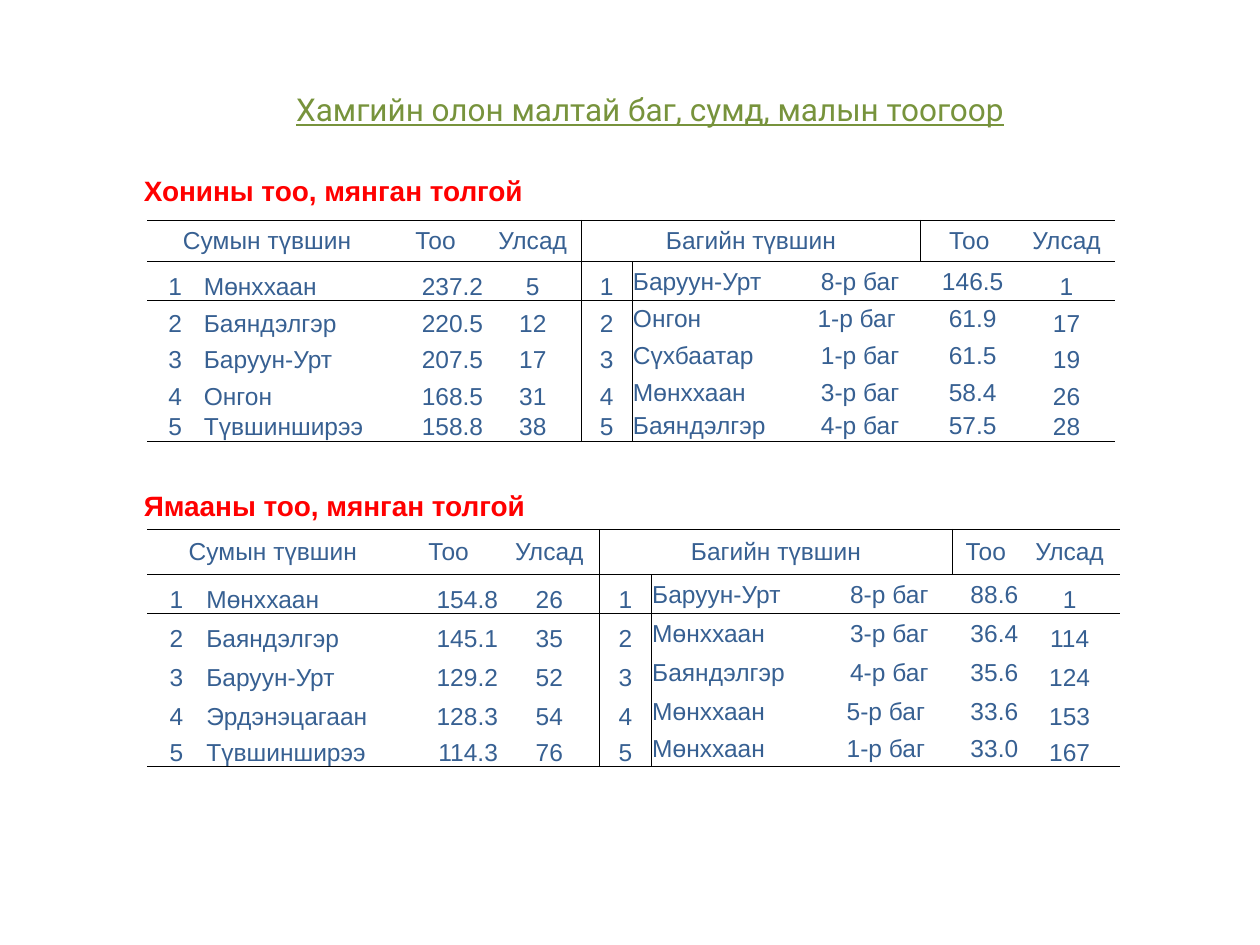
"""Build the slide that ranks districts and bags by sheep and goat numbers."""
from dataclasses import dataclass

import lxml.etree
import pptx
import pptx.dml.color
import pptx.enum.text
import pptx.oxml.ns
import pptx.util

Cm, Pt = pptx.util.Cm, pptx.util.Pt
ALIGN, ANCHOR = pptx.enum.text.PP_ALIGN, pptx.enum.text.MSO_ANCHOR
qn = pptx.oxml.ns.qn

COLORS = {"title": "77933C", "heading": "FF0000", "cell": "376092", "rule": "000000"}
NO_STYLE = "{2D5ABB26-0587-4C30-8999-92F81FD0307C}"
HEADER = ("Сумын түвшин", "", "Тоо", "Улсад", "Багийн түвшин", "", "", "Тоо", "Улсад")
MIDDLE_COLS = (5, 6, 7)
DIVIDER = 4


@dataclass
class Label:
    text: str
    left: float
    top: float
    height: float
    size: int
    color: str
    font: str = "Arial"
    bold: bool = False
    underline: bool = False


@dataclass
class Ranking:
    top: float
    widths: tuple[float, ...]
    heights: tuple[float, ...]
    bag_count_align: ALIGN
    rows: tuple[tuple[str, ...], ...]


LABELS = (
    Label("Хамгийн олон малтай баг, сумд, малын тоогоор", 5.72, 1.7, 1.02, 18,
          "title", font="Roboto", underline=True),
    Label("Хонины тоо, мянган толгой", 2.65, 3.38, 0.94, 16, "heading", bold=True),
    Label("Ямааны тоо, мянган толгой", 2.65, 9.73, 0.94, 16, "heading", bold=True),
)

GOATS = Ranking(
    10.67,
    (1.17, 3.89, 2.03, 2.03, 1.04, 3.53, 2.54, 1.35, 2.03),
    (0.91, 0.79, 0.79, 0.79, 0.79, 0.71),
    ALIGN.RIGHT,
    (
        ("Мөнххаан", "154.8", "26", "Баруун-Урт", "8-р баг", " 88.6", "1"),
        ("Баяндэлгэр", "145.1", "35", "Мөнххаан", "3-р баг", " 36.4", "114"),
        ("Баруун-Урт", "129.2", "52", "Баяндэлгэр", "4-р баг", " 35.6", "124"),
        ("Эрдэнэцагаан", "128.3", "54", "Мөнххаан", "5-р баг ", " 33.6", "153"),
        ("Түвшинширээ", "114.3", "76", "Мөнххаан", "1-р баг ", " 33.0", "167"),
    ),
)

SHEEP = Ranking(
    4.44,
    (1.12, 3.71, 1.96, 1.96, 1.02, 3.38, 2.44, 1.96, 1.96),
    (0.83, 0.79, 0.74, 0.74, 0.74, 0.61),
    ALIGN.CENTER,
    (
        ("Мөнххаан", "237.2", "5", "Баруун-Урт", "8-р баг", " 146.5", "1"),
        ("Баяндэлгэр", "220.5", "12", "Онгон", "1-р баг ", " 61.9", "17"),
        ("Баруун-Урт", "207.5", "17", "Сүхбаатар", "1-р баг", " 61.5", "19"),
        ("Онгон", "168.5", "31", "Мөнххаан", "3-р баг", " 58.4", "26"),
        ("Түвшинширээ", "158.8", "38", "Баяндэлгэр", "4-р баг", " 57.5", "28"),
    ),
)


def format_runs(p, size: int, color: str, font: str = "Arial",
                bold: bool = False, underline: bool = False) -> None:
    """Apply one font to every run of a paragraph."""
    for r in p.runs:
        r.font.size = Pt(size)
        r.font.name = font
        r.font.bold = bold
        r.font.underline = underline
        r.font.color.rgb = pptx.dml.color.RGBColor.from_string(COLORS[color])


def add_label(s, label: Label) -> None:
    """Add a title or heading text box."""
    sp = s.shapes.add_textbox(Cm(label.left), Cm(label.top), Cm(14.82), Cm(label.height))
    tf = sp.text_frame
    tf.word_wrap = True
    tf.auto_size = pptx.enum.text.MSO_AUTO_SIZE.SHAPE_TO_FIT_TEXT
    tf.text = label.text
    format_runs(tf.paragraphs[0], label.size, label.color, label.font,
                label.bold, label.underline)


def add_border(cell, side: str) -> None:
    """Draw a thin rule on one side of a cell."""
    tc_pr = cell._tc.get_or_add_tcPr()
    ln = lxml.etree.SubElement(tc_pr, qn(f"a:ln{side}"), w=str(Pt(0.5)))
    fill = lxml.etree.SubElement(ln, qn("a:solidFill"))
    lxml.etree.SubElement(fill, qn("a:srgbClr"), val=COLORS["rule"])


def border_sides(row: int, col: int, last_row: int) -> list[str]:
    """List the ruled sides of a cell in schema order."""
    ruled = {
        "L": col == DIVIDER,
        "R": col == DIVIDER - 1,
        "T": row in (0, 1),
        "B": row in (0, last_row),
    }
    return [side for side, on in ruled.items() if on]


def add_ranking(s, ranking: Ranking) -> None:
    """Add a table that ranks districts on the left and bags on the right."""
    ranked = [(str(i), *row[:3], str(i), *row[3:]) for i, row in enumerate(ranking.rows, 1)]
    data = [HEADER, *ranked]
    aligns = [ALIGN.CENTER] * len(HEADER)
    aligns[1] = aligns[5] = ALIGN.LEFT
    aligns[2] = ALIGN.RIGHT
    aligns[7] = ranking.bag_count_align

    sp = s.shapes.add_table(len(data), len(HEADER), Cm(2.97), Cm(ranking.top),
                            Cm(sum(ranking.widths)), Cm(sum(ranking.heights)))
    table = sp.table
    table.first_row = table.horz_banding = False
    table._tbl.tblPr.find(qn("a:tableStyleId")).text = NO_STYLE
    for column, width in zip(table.columns, ranking.widths):
        column.width = Cm(width)
    for row, height in zip(table.rows, ranking.heights):
        row.height = Cm(height)

    for i, values in enumerate(data):
        for j, value in enumerate(values):
            cell = table.cell(i, j)
            cell.margin_left = cell.margin_right = cell.margin_top = Cm(0.02)
            cell.margin_bottom = 0
            middle = i == 0 or j in MIDDLE_COLS
            cell.vertical_anchor = ANCHOR.MIDDLE if middle else ANCHOR.BOTTOM
            for side in border_sides(i, j, len(data) - 1):
                add_border(cell, side)
            cell.fill.background()
            cell.text_frame.text = value
            p = cell.text_frame.paragraphs[0]
            p.alignment = ALIGN.CENTER if i == 0 else aligns[j]
            format_runs(p, 14, "cell")

    table.cell(0, 0).merge(table.cell(0, 1))
    table.cell(0, 4).merge(table.cell(0, 6))


def main() -> None:
    """Create the presentation and save it."""
    prs = pptx.Presentation()
    prs.slide_width, prs.slide_height = Cm(25.4), Cm(19.05)
    s = prs.slides.add_slide(prs.slide_layouts[6])
    for label in LABELS:
        add_label(s, label)
    for ranking in (GOATS, SHEEP):
        add_ranking(s, ranking)
    prs.save("out.pptx")


if __name__ == "__main__":
    main()
